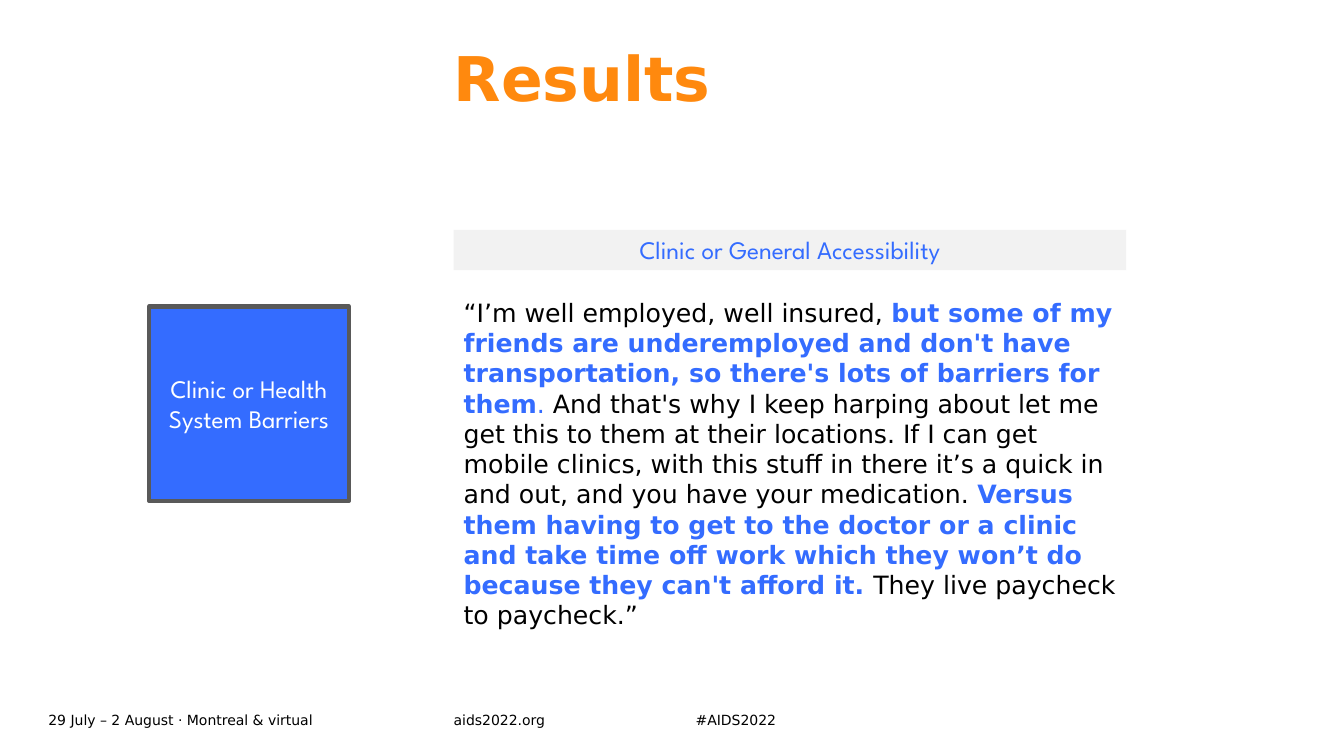
from dataclasses import dataclass

import pptx
import pptx.util
import pptx.dml.color
import pptx.enum.shapes
import pptx.enum.text

ANCHOR = pptx.enum.text.MSO_ANCHOR
ALIGN = pptx.enum.text.PP_ALIGN
WIDTH, HEIGHT = 13.33, 7.5


@dataclass(frozen=True)
class Theme:
    body_font: str = "DejaVu Sans"
    label_font: str = "League Spartan"
    orange: str = "FF890E"
    blue: str = "346CFF"
    black: str = "000000"
    white: str = "FFFFFF"
    pale: str = "F2F2F2"
    border: str = "595959"
    title_size: int = 44
    body_size: int = 18
    footer_size: int = 10


THEME = Theme()

# Shared left edge and width of the right-hand column
COLUMN_LEFT, COLUMN_WIDTH = 4.5, 6.67

# Each part of the quote: wording, colour, bold
QUOTE = [
    ("“I’m well employed, well insured, ", THEME.black, False),
    ("but some of my friends are underemployed and don't have transportation, "
     "so there's lots of barriers for them", THEME.blue, True),
    (". ", THEME.blue, False),
    ("And that's why I keep harping about let me get this to them at their locations. "
     "If I can get mobile clinics, with this stuff in there it’s a quick in and out, "
     "and you have your medication. ", THEME.black, False),
    ("Versus them having to get to the doctor or a clinic and take time off work "
     "which they won’t do because they can't afford it. ", THEME.blue, True),
    ("They live paycheck to paycheck.”", THEME.black, False),
]


def rgb(colour):
    return pptx.dml.color.RGBColor.from_string(colour)


def inches(box):
    return [pptx.util.Inches(length) for length in box]


def style(font, name, size, colour, bold=False):
    font.name = name
    font.size = pptx.util.Pt(size)
    font.color.rgb = rgb(colour)
    font.bold = bold


def add_text(page, box, anchor=ANCHOR.TOP, inset=True):
    frame = page.shapes.add_textbox(*inches(box)).text_frame
    frame.word_wrap = True
    frame.vertical_anchor = anchor
    if not inset:
        frame.margin_left = frame.margin_right = 0
        frame.margin_top = frame.margin_bottom = 0
    return frame


def add_title(page, box, wording):
    para = add_text(page, box, inset=False).paragraphs[0]
    para.text = wording
    para.line_spacing = 0.9
    style(para.runs[0].font, THEME.body_font, THEME.title_size, THEME.orange, True)


def add_label(page, box, wording, fill, colour, border=None):
    label = page.shapes.add_shape(pptx.enum.shapes.MSO_SHAPE.RECTANGLE, *inches(box))
    label.shadow.inherit = False
    label.fill.solid()
    label.fill.fore_color.rgb = rgb(fill)
    if border:
        label.line.color.rgb = rgb(border)
        label.line.width = pptx.util.Pt(3)
    else:
        label.line.fill.background()
    frame = label.text_frame
    frame.word_wrap = True
    frame.vertical_anchor = ANCHOR.MIDDLE if border else ANCHOR.TOP
    para = frame.paragraphs[0]
    para.text = wording
    para.alignment = ALIGN.CENTER
    style(para.runs[0].font, THEME.label_font, THEME.body_size, colour)


def add_quote(page, box, parts):
    para = add_text(page, box).paragraphs[0]
    for wording, colour, bold in parts:
        span = para.add_run()
        span.text = wording
        style(span.font, THEME.body_font, THEME.body_size, colour, bold)


def add_footer(page, box, entries):
    left, top, width, height = box
    stops = [start for start, _ in entries[1:]] + [left + width]
    for (start, wording), stop in zip(entries, stops):
        frame = add_text(page, (start, top, stop - start, height), ANCHOR.MIDDLE, False)
        frame.text = wording
        style(frame.paragraphs[0].runs[0].font, THEME.body_font, THEME.footer_size, THEME.black)


def build_results(page):
    add_footer(page, (0.48, 7.02, 8.35, 0.24), [
        (0.48, "29 July – 2 August · Montreal & virtual"),
        (COLUMN_LEFT, "aids2022.org"),
        (6.9, "#AIDS2022"),
    ])
    add_title(page, (COLUMN_LEFT, 0.48, 8.35, 1.34), "Results")
    # Theme of the barriers, then the code and its quote
    add_label(page, (1.48, 3.04, 1.98, 1.93), "Clinic or Health System Barriers",
              THEME.blue, THEME.white, THEME.border)
    add_quote(page, (COLUMN_LEFT, 2.9, COLUMN_WIDTH, 3.43), QUOTE)
    add_label(page, (COLUMN_LEFT, 2.28, COLUMN_WIDTH, 0.4), "Clinic or General Accessibility",
              THEME.pale, THEME.blue)


def main():
    deck = pptx.Presentation()
    deck.slide_width, deck.slide_height = inches((WIDTH, HEIGHT))
    build_results(deck.slides.add_slide(deck.slide_layouts[6]))
    deck.save("out.pptx")


if __name__ == "__main__":
    main()
